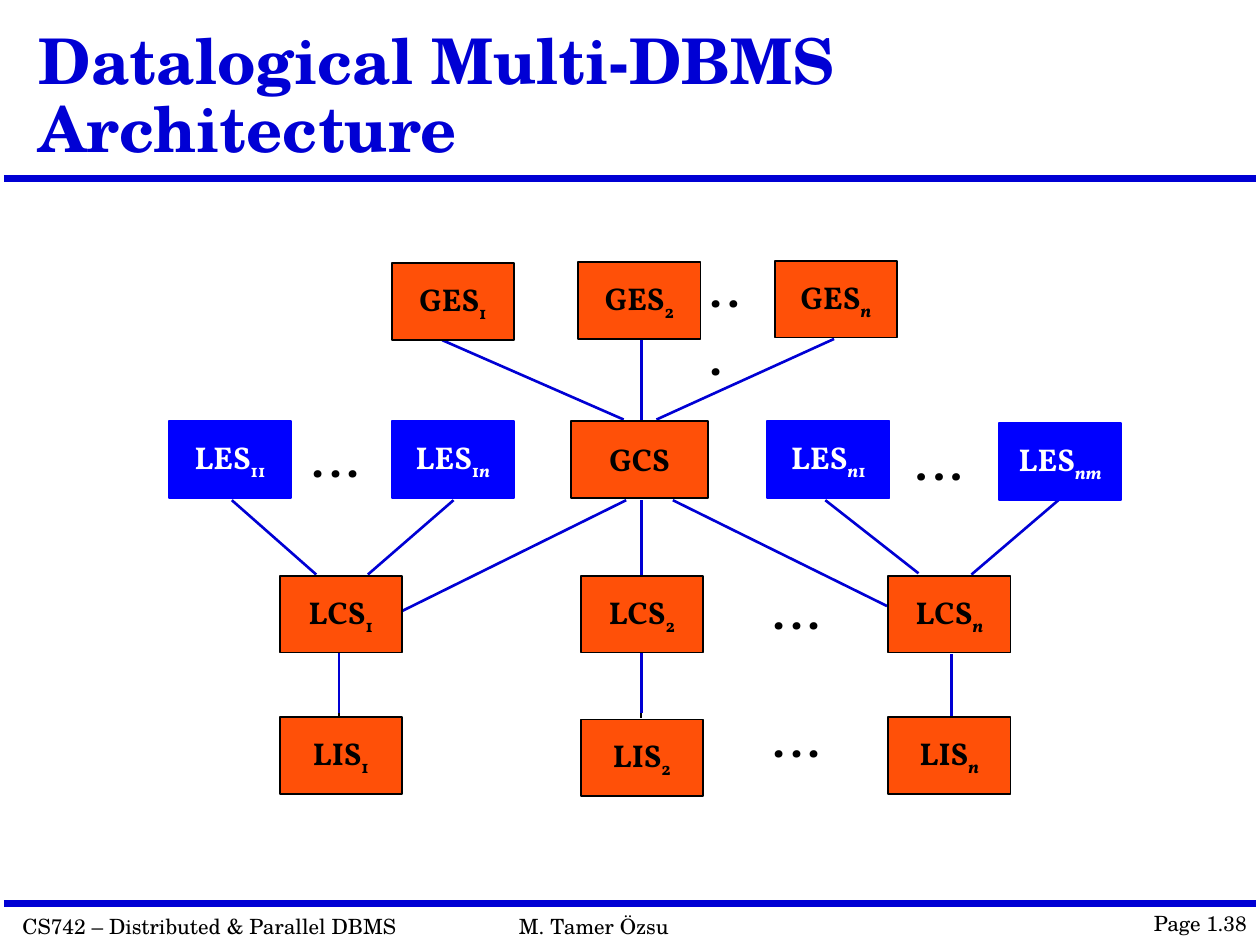
import itertools
import lxml.etree
import pptx
import pptx.dml.color
import pptx.enum.shapes
import pptx.enum.text
import pptx.oxml.ns
import pptx.util

Inches = pptx.util.Inches
RGBColor = pptx.dml.color.RGBColor
ANCHOR = pptx.enum.text.MSO_ANCHOR

BLACK = RGBColor(0x00, 0x00, 0x00)
WHITE = RGBColor(0xFF, 0xFF, 0xFF)
ORANGE = RGBColor(0xFF, 0x50, 0x08)
BLUE = RGBColor(0x00, 0x00, 0xFF)
NAVY = RGBColor(0x00, 0x00, 0xD4)
SERIF = "TeX Gyre Schola"
LABEL = "Vollkorn"

BOX_W, BOX_H = 0.97, 0.61
BOXES = [
    ("GES", "1", 1.77, 0.02), ("GES", "2", 3.25, 0.01), ("GES", "n", 4.81, 0),
    ("LES", "11", 0, 1.27), ("LES", "1n", 1.77, 1.27),
    ("LES", "n1", 4.75, 1.27), ("LES", "nm", 6.59, 1.29),
    ("LCS", "1", 0.88, 2.5), ("LCS", "2", 3.27, 2.5), ("LCS", "n", 5.71, 2.5),
    ("LIS", "1", 0.88, 3.62), ("LIS", "2", 3.27, 3.64), ("LIS", "n", 5.71, 3.62),
]
GES_GCS_LINES = [(2.17, 0.63, 3.61, 1.26), (3.75, 0.57, 3.75, 1.26), (5.28, 0.62, 3.87, 1.26)]
GCS_LCS_LINES = [(3.63, 1.9, 1.85, 2.78), (3.75, 1.9, 3.75, 2.49), (4, 1.9, 5.7, 2.74)]
LES_LCS_LINES = [(0.5, 1.9, 1.17, 2.49), (2.26, 1.9, 1.58, 2.49),
                 (5.21, 1.9, 5.95, 2.48), (7.06, 1.9, 6.37, 2.49)]
LCS_LIS_LINES = [(1.35, 3.11, 1.35, 3.59), (3.75, 3.11, 3.75, 3.59), (6.21, 3.12, 6.21, 3.61)]
LIS_STUBS = [(1.35, 3.15, 1.35, 3.63), (3.75, 3.15, 3.75, 3.63)]
ELLIPSES = [(1.03, 1.23), (5.82, 1.25), (4.69, 2.43), (4.69, 3.45)]


def add_line(s, x1, y1, x2, y2, color, width):
    line = s.shapes.add_connector(pptx.enum.shapes.MSO_CONNECTOR.STRAIGHT,
                                  Inches(x1), Inches(y1), Inches(x2), Inches(y2))
    line.line.color.rgb = color
    line.line.width = pptx.util.Pt(width)
    lxml.etree.SubElement(line._element.spPr, pptx.oxml.ns.qn("a:effectLst"))


def style_run(r, font, size, color, bold=False):
    r.font.name = font
    r.font.size = pptx.util.Pt(size)
    r.font.color.rgb = color
    r.font.bold = bold


def add_text(s, text, x, y, w, h, font, size, color, bold=False, wrap=False):
    tf = s.shapes.add_textbox(Inches(x), Inches(y), Inches(w), Inches(h)).text_frame
    tf.word_wrap = wrap
    tf.text = text
    style_run(tf.paragraphs[0].runs[0], font, size, color, bold)
    return tf


def add_box(s, name, subscript, x, y, w=BOX_W):
    local = name == "LES"
    sp = s.shapes.add_shape(pptx.enum.shapes.MSO_SHAPE.RECTANGLE,
                            Inches(x), Inches(y), Inches(w), Inches(BOX_H))
    sp.shadow.inherit = False
    sp.fill.solid()
    sp.fill.fore_color.rgb = BLUE if local else ORANGE
    sp.line.color.rgb = BLUE if local else BLACK
    sp.line.width = pptx.util.Pt(1)
    tf = sp.text_frame
    tf.word_wrap = False
    tf.vertical_anchor = ANCHOR.MIDDLE
    color = WHITE if local else BLACK
    p = tf.paragraphs[0]
    p.alignment = pptx.enum.text.PP_ALIGN.CENTER
    r = p.add_run()
    r.text = name
    style_run(r, LABEL, 18, color, True)
    for is_letter, chars in itertools.groupby(subscript, str.isalpha):
        r = p.add_run()
        r.text = "".join(chars)
        style_run(r, LABEL, 18, color, True)
        r.font.italic = is_letter
        r._r.get_or_add_rPr().set("baseline", "-25000")


def add_header(s, x, y, w, h):
    add_line(s, x, y + h, x + w, y + h, NAVY, 4)
    tf = add_text(s, "Datalogical Multi-DBMS Architecture", x + 0.18, y, 7.83, 1.25,
                  SERIF, 36, NAVY, bold=True, wrap=True)
    tf.vertical_anchor = ANCHOR.BOTTOM
    tf.paragraphs[0].line_spacing = 0.9


def add_footer(s, x, y, w):
    add_line(s, x, y, x + w, y, NAVY, 4)
    for text, dx, dy, width in [("CS742 – Distributed & Parallel DBMS", 0.05, 0.03, 3.2),
                                ("M. Tamer Özsu", 3.99, 0.03, 1.39),
                                ("Page 1.38", 9.03, 0.01, 0.94)]:
        add_text(s, text, x + dx, y + dy, width, 0.3, SERIF, 12, BLACK)


def add_diagram(s, x, y):
    for x1, y1, x2, y2 in LIS_STUBS:
        add_line(s, x + x1, y + y1, x + x2, y + y2, BLACK, 1)
    for x1, y1, x2, y2 in GES_GCS_LINES + GCS_LCS_LINES + LES_LCS_LINES + LCS_LIS_LINES:
        add_line(s, x + x1, y + y1, x + x2, y + y2, NAVY, 1.5)
    add_text(s, "...", x + 4.19, y - 0.12, 0.54, 0.64, LABEL, 32, BLACK, wrap=True)
    for dx, dy in ELLIPSES:
        add_text(s, "…", x + dx, y + dy, 0.65, 0.64, LABEL, 32, BLACK)
    add_box(s, "GCS", "", x + 3.19, y + 1.27, w=1.09)
    for name, subscript, dx, dy in BOXES:
        add_box(s, name, subscript, x + dx, y + dy)


def main():
    prs = pptx.Presentation()
    prs.slide_width = Inches(10)
    prs.slide_height = Inches(7.5)
    s = prs.slides.add_slide(prs.slide_layouts[6])
    add_header(s, 0.03, 0.12, 9.94, 1.3)
    add_footer(s, 0.03, 7.17, 9.94)
    add_diagram(s, 1.34, 2.07)
    prs.save("out.pptx")


if __name__ == "__main__":
    main()
